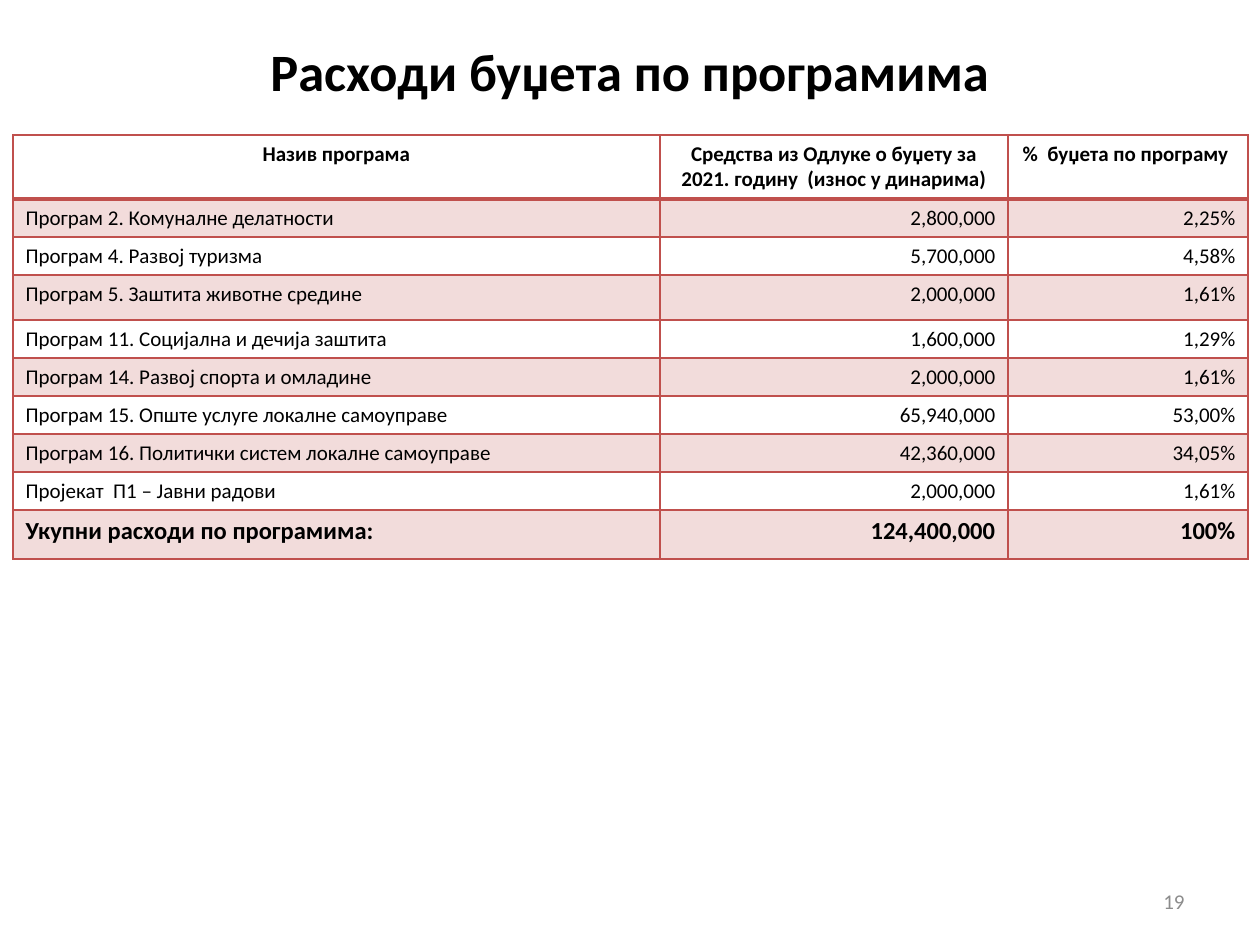
from lxml.etree import SubElement
from pptx import Presentation
from pptx.dml.color import RGBColor
from pptx.enum.text import MSO_ANCHOR as Anchor, PP_ALIGN as Align
from pptx.oxml import parse_xml
from pptx.oxml.ns import nsdecls, qn
from pptx.util import Pt

PX = 914400 // 126
COLORS = {"text": "000000", "accent": "C0504D", "number": "8C8C8C"}


def add_run(paragraph, text, size, color, bold, align):
    paragraph.alignment = align
    run = paragraph.add_run()
    run.text = text
    run.font.name = "Calibri"
    run.font.size = Pt(size)
    run.font.bold = bold
    run.font.color.rgb = RGBColor.from_string(COLORS[color])


def set_border(cell, position, side, width):
    line = parse_xml(
        f'<a:{side} {nsdecls("a")} w="{Pt(width)}"><a:solidFill>'
        f'<a:srgbClr val="{COLORS["accent"]}"/></a:solidFill></a:{side}>'
    )
    cell._tc.get_or_add_tcPr().insert(position, line)


presentation = Presentation()
presentation.slide_width = 1260 * PX
presentation.slide_height = 945 * PX
slide = presentation.slides.add_slide(presentation.slide_layouts[6])

labels = [
    ("Расходи буџета по програмима", (93, 17, 1074, 107), 30, "text", True, Align.CENTER),
    ("19", (903, 876, 294, 50), 12, "number", False, Align.RIGHT),
]
for text, box, size, color, bold, align in labels:
    shape = slide.shapes.add_textbox(*[length * PX for length in box])
    frame = shape.text_frame
    frame.word_wrap = True
    frame.vertical_anchor = Anchor.MIDDLE
    add_run(frame.paragraphs[0], text, size, color, bold, align)

rows = [
    ("Назив програма", "Средства из Одлуке о буџету за 2021. годину  (износ у динарима)", "%  буџета по програму "),
    ("Програм 2. Комуналне делатности", "2,800,000", "2,25%"),
    ("Програм 4. Развој туризма", "5,700,000", "4,58%"),
    ("Програм 5. Заштита животне средине", "2,000,000", "1,61%"),
    ("Програм 11. Социјална и дечија заштита", "1,600,000", "1,29%"),
    ("Програм 14. Развој спорта и омладине", "2,000,000", "1,61%"),
    ("Програм 15. Опште услуге локалне самоуправе", "65,940,000", "53,00%"),
    ("Програм 16. Политички систем локалне самоуправе", "42,360,000", "34,05%"),
    ("Пројекат  П1 – Јавни радови", "2,000,000", "1,61%"),
    ("Укупни расходи по програмима:", "124,400,000", "100%"),
]
column_widths = [647, 348, 240]
row_heights = [64, 38, 38, 45, 38, 38, 38, 38, 38, 49]
last = len(rows) - 1

table = slide.shapes.add_table(
    len(rows), len(column_widths), 13 * PX, 135 * PX,
    sum(column_widths) * PX, sum(row_heights) * PX,
).table
table.first_row = False
table.horz_banding = False
for column, width in zip(table.columns, column_widths):
    column.width = width * PX

for row_index, (values, height) in enumerate(zip(rows, row_heights)):
    table.rows[row_index].height = height * PX
    for column_index, value in enumerate(values):
        cell = table.cell(row_index, column_index)
        if row_index % 2:
            cell.fill.solid()
            cell.fill.fore_color.rgb = RGBColor.from_string(COLORS["accent"])
            fill_color = cell._tc.tcPr.find(".//" + qn("a:srgbClr"))
            SubElement(fill_color, qn("a:alpha"), val="20000")
        else:
            cell.fill.background()
        top = 2 if row_index == 1 else 1
        bottom = 2 if row_index == 0 else 1
        borders = [("lnL", 1), ("lnR", 1), ("lnT", top), ("lnB", bottom)]
        for position, (side, width) in enumerate(borders):
            set_border(cell, position, side, width)
        if row_index == 0:
            align = Align.CENTER
        else:
            align = Align.RIGHT if column_index else Align.LEFT
        size = 14 if row_index == last else 12
        add_run(cell.text_frame.paragraphs[0], value, size, "text", row_index in (0, last), align)

presentation.save("out.pptx")
